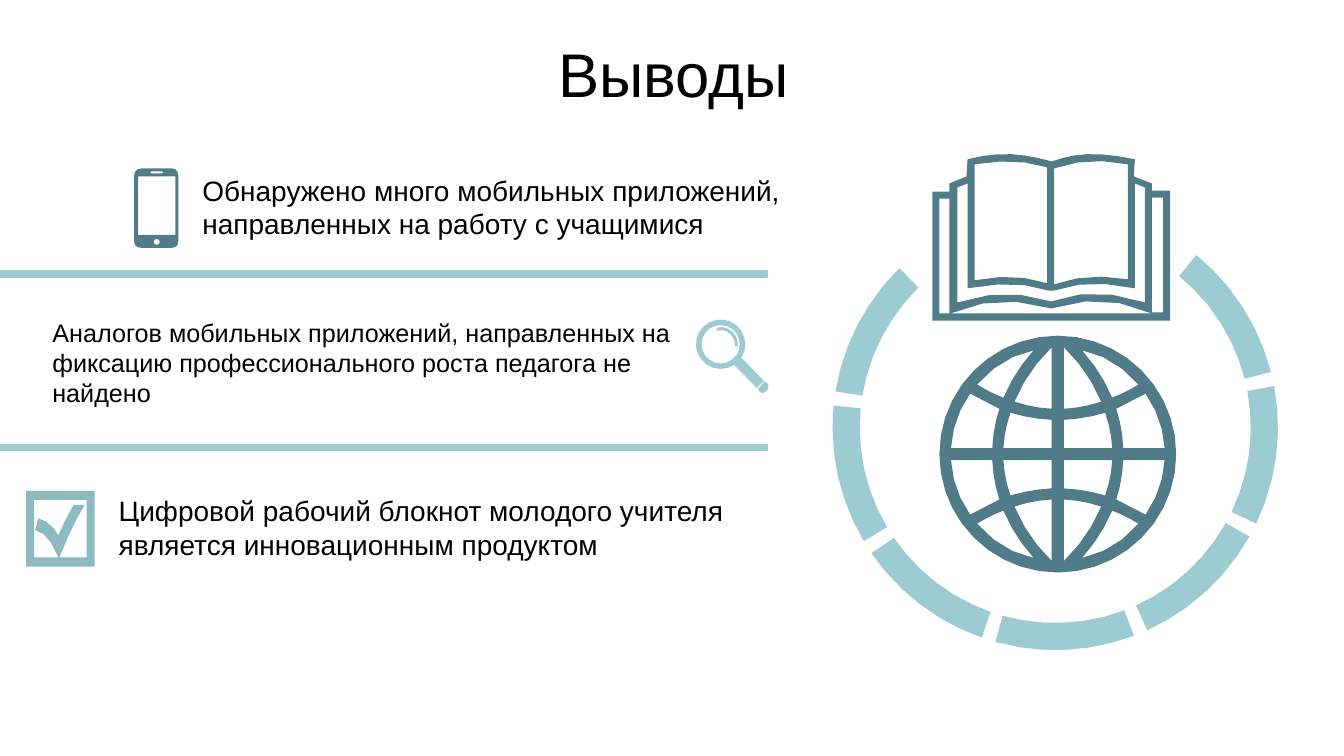
from dataclasses import dataclass
from itertools import product
from math import cos, radians, sin

from pptx import Presentation
from pptx.dml.color import RGBColor as RGB
from pptx.enum.shapes import MSO_SHAPE as SHAPE
from pptx.enum.text import MSO_ANCHOR as ANCHOR, MSO_AUTO_SIZE as AUTO, PP_ALIGN as ALIGN
from pptx.util import Cm, Pt


@dataclass(frozen=True)
class Theme:
    font: str = "Arial"
    text: RGB = RGB(0, 0, 0)
    dark: RGB = RGB(0x50, 0x7C, 0x89)
    light: RGB = RGB(0x9C, 0xCC, 0xD2)
    check: RGB = RGB(0x8C, 0xBA, 0xBE)
    title: Pt = Pt(44)
    large: Pt = Pt(20)
    small: Pt = Pt(18)


def arc(cx, cy, radius, start, end, steps):
    angles = [radians(start + (end - start) * i / steps) for i in range(steps + 1)]
    return [(cx + radius * cos(a), cy + radius * sin(a)) for a in angles]


def draw_icon(shapes, contours, color):
    fb = None
    for contour in contours:
        pts = []
        for entry in contour:
            if len(entry) == 2:
                pts.append(entry)
                continue
            (x0, y0), (x1, y1, x2, y2) = pts[-1], entry
            for t in (1 / 3, 2 / 3, 1):
                a, b, c = (1 - t) ** 2, 2 * t * (1 - t), t * t
                pts.append((a * x0 + b * x1 + c * x2, a * y0 + b * y1 + c * y2))
        pts = [(x * 25.4, y * 25.4) for x, y in pts]
        if fb is None:
            fb = shapes.build_freeform(*pts[0], scale=Cm(0.001))
        else:
            fb.move_to(*pts[0])
        fb.add_line_segments(pts[1:], close=True)
    sp = fb.convert_to_shape()
    sp.shadow.inherit = False
    sp.fill.solid()
    sp.fill.fore_color.rgb = color
    sp.line.fill.background()


theme = Theme()
prs = Presentation()
prs.slide_width, prs.slide_height = Cm(33.87), Cm(19.05)
s = prs.slides.add_slide(prs.slide_layouts[5])

title = s.shapes.title
title.left, title.top, title.width, title.height = Cm(0.89), Cm(0.94), Cm(32.16), Cm(2.01)
tf = title.text_frame
tf.text = "Выводы"
tf.auto_size = AUTO.NONE
tf.vertical_anchor = ANCHOR.MIDDLE
p = tf.paragraphs[0]
p.alignment = ALIGN.CENTER
p.line_spacing = 0.9
p.space_before = Pt(10)
r = p.runs[0]
r.font.name, r.font.size, r.font.color.rgb = theme.font, theme.title, theme.text

book = [
    [(1044, 160), (1060, 154, 1078, 153), (1098, 152, 1126, 158), (1125, 175),
     (1143, 182), (1143, 189), (1161, 189), (1161, 318), (925, 318), (925, 190),
     (942, 190), (942, 182), (959, 175), (960, 158), (982, 152, 1004, 153),
     (1022, 154, 1043, 160)],
    [(1039, 281), (1039, 166), (1007, 156, 967, 163), (967, 278), (1007, 270, 1039, 281)],
    [(1119, 277), (1119, 163), (1080, 155, 1046, 167), (1046, 282), (1079, 270, 1119, 277)],
    [(960, 286), (960, 182), (950, 186), (950, 300), (997, 284, 1043, 299),
     (1085, 283, 1136, 300), (1136, 186), (1126, 182), (1126, 286),
     (1080, 276, 1047, 288), (1043, 289, 1039, 288), (1008, 277, 960, 286)],
    [(943, 311), (1143, 311), (1095, 289, 1043, 306), (990, 290, 943, 311)],
    [(1143, 196), (1143, 310), (1154, 310), (1154, 196)],
    [(942, 311), (942, 197), (932, 197), (932, 311)],
]
draw_icon(s.shapes, book, theme.dark)

globe_x, globe_y = 1049.5, 450.5
quarter_cells = [
    [(106, 6), (104, 36, 87, 60), (58, 45), (64, 27, 65, 6)],
    [(6, 6), (54, 6), (53, 24, 47, 41), (27, 35, 6, 34)],
    [(6, 106), (6, 45), (25, 46, 43, 52), (30, 83, 6, 106)],
    [(24, 103), (43, 82, 54, 56), (67, 61, 80, 69), (57, 96, 24, 103)],
]
globe = [arc(globe_x, globe_y, 117.5, 0, 360, 40)]
for sx, sy in product((1, -1), repeat=2):
    for cell in quarter_cells:
        globe.append([tuple(c + v * sign for v, sign, c in
                            zip(entry, (sx, sy) * 2, (globe_x, globe_y) * 2))
                      for entry in cell])
draw_icon(s.shapes, globe, theme.dark)

for i in range(7):
    start = -50.7 + 40 * i
    end = start + 36.3
    segment = arc(1047, 424, 221, start, end, 6) + arc(1047, 424, 194, end, start, 6)
    draw_icon(s.shapes, [segment], theme.light)

conclusions = [
    ("Цифровой рабочий блокнот молодого учителя является инновационным продуктом",
     2.74, 12.32, 16.48, 1.96, theme.large),
    ("Обнаружено много мобильных приложений, направленных на работу с учащимися",
     4.85, 4.24, 16.74, 1.96, theme.large),
    ("Аналогов мобильных приложений, направленных на фиксацию профессионального "
     "роста педагога не найдено", 1.07, 7.87, 16.94, 2.57, theme.small),
]
for text, x, y, w, h, size in conclusions:
    tf = s.shapes.add_textbox(Cm(x), Cm(y), Cm(w), Cm(h)).text_frame
    tf.word_wrap = True
    tf.auto_size = AUTO.SHAPE_TO_FIT_TEXT
    tf.text = text
    r = tf.paragraphs[0].runs[0]
    r.font.name, r.font.size, r.font.color.rgb = theme.font, size, theme.text

for y in (11.2, 6.83):
    sp = s.shapes.add_shape(SHAPE.RECTANGLE, Cm(0), Cm(y), Cm(19.33), Cm(0.15))
    sp.shadow.inherit = False
    sp.fill.solid()
    sp.fill.fore_color.rgb = sp.line.color.rgb = theme.light
    sp.line.width = Pt(1)

phone = [
    [(141, 167), (170, 167), (177, 167, 177, 175), (177, 239), (177, 246, 170, 246),
     (141, 246), (133, 246, 133, 239), (133, 175), (133, 167, 141, 167)],
    [(137, 175), (137, 233), (174, 233), (174, 175)],
    [(150, 170), (149, 171), (150, 172), (161, 172), (162, 171), (161, 170)],
    arc(155.5, 240, 3, 0, 360, 10),
]
draw_icon(s.shapes, phone, theme.dark)

checkbox = [
    [(26, 487), (94, 487), (94, 562), (26, 562)],
    [(34, 496), (34, 553), (58, 553), (48, 528, 35, 526), (38, 514),
     (51, 518, 58, 531), (65, 515, 73, 501), (84, 501), (72, 520, 59, 553),
     (86, 553), (86, 496)],
]
draw_icon(s.shapes, checkbox, theme.check)

lens_x, lens_y = 715, 341.5
magnifier = [
    arc(lens_x, lens_y, 24.5, 57, 393, 20) + [(758, 378), (751, 385)],
    arc(lens_x, lens_y, 19, 0, 360, 20),
    arc(lens_x, lens_y, 17, -104, 8, 6) + arc(lens_x, lens_y, 14, 8, -104, 6),
    [(759, 378), (762, 381), (763, 383.5, 762, 386), (759, 389),
     (756, 390.5, 754, 389), (752, 386)],
]
draw_icon(s.shapes, magnifier, theme.light)

prs.save("out.pptx")
